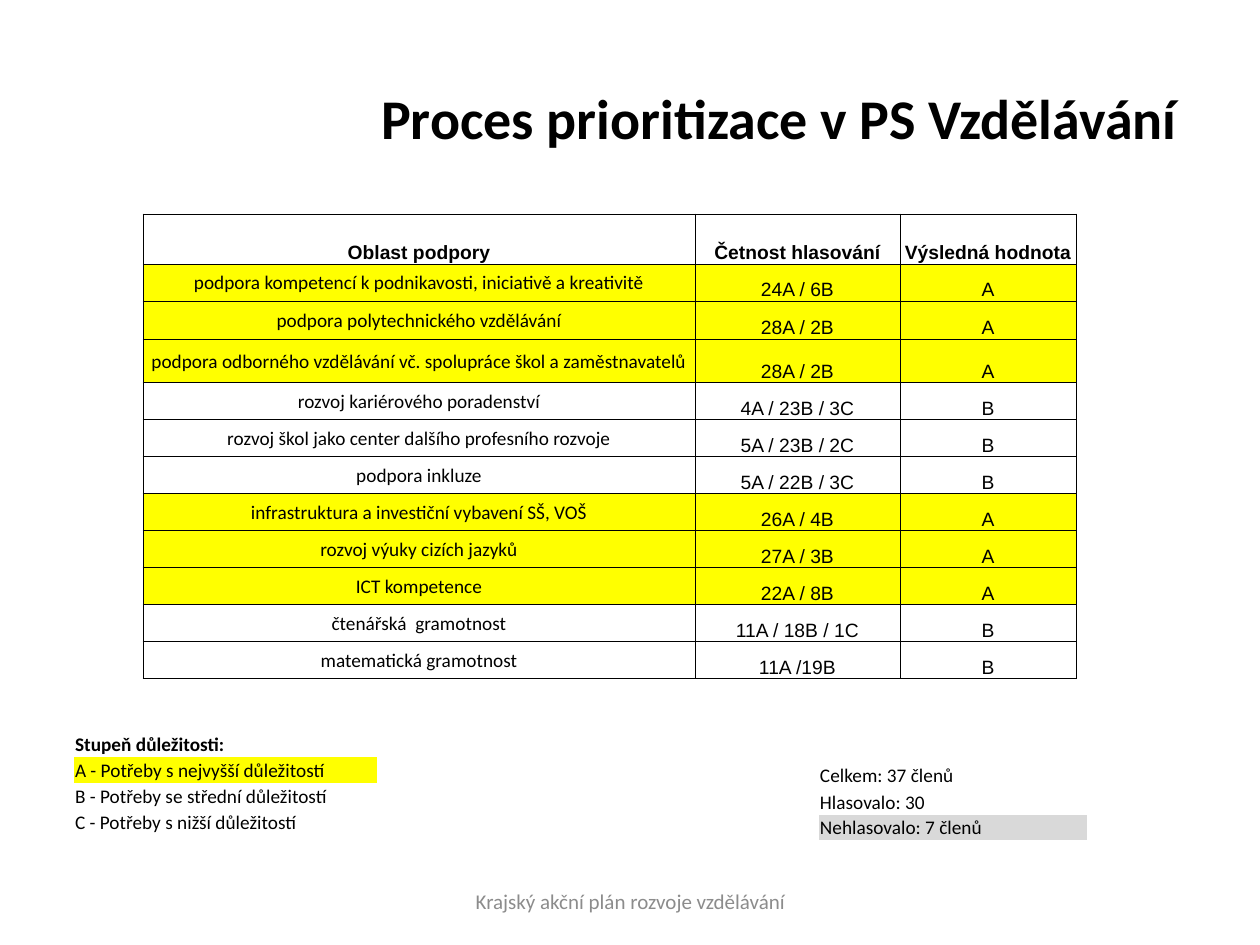
from lxml.etree import SubElement
from pptx import Presentation
from pptx.dml.color import RGBColor
from pptx.enum.text import MSO_ANCHOR, PP_ALIGN
from pptx.oxml.ns import qn
from pptx.util import Pt

EMU_PER_PX = 914400 / 126
COLORS = {"text": "000000", "border": "000000", "top": "FFFF00",
          "absent": "D9D9D9", "footer": "8C8C8C"}
NO_STYLE = "{2D5ABB26-0587-4C30-8999-92F81FD0307C}"


def px(length):
    return round(length * EMU_PER_PX)


class SlideBuilder:
    body_font = "Calibri"
    number_font = "Arial"
    table_size = 11

    def __init__(self, page):
        self.page = page

    def style(self, para, size, color="text", bold=False, font=None, align=PP_ALIGN.LEFT):
        para.alignment = align
        for span in para.runs:
            span.font.size = Pt(size)
            span.font.name = font or self.body_font
            span.font.bold = bold
            span.font.color.rgb = RGBColor.from_string(COLORS[color])

    def centered_text(self, shape, text, size, **look):
        frame = shape.text_frame
        frame.word_wrap = True
        frame.vertical_anchor = MSO_ANCHOR.MIDDLE
        frame.text = text
        self.style(frame.paragraphs[0], size, align=PP_ALIGN.CENTER, **look)

    def title(self, text, left, top, width, height):
        shape = self.page.shapes.title
        shape.left, shape.top = px(left), px(top)
        shape.width, shape.height = px(width), px(height)
        self.centered_text(shape, text, 32, bold=True)

    def label(self, text, left, top, width, height, color):
        box = self.page.shapes.add_textbox(px(left), px(top), px(width), px(height))
        self.centered_text(box, text, 12, color=color)

    def table(self, left, top, columns, heights):
        frame = self.page.shapes.add_table(len(heights), len(columns), px(left), px(top),
                                           px(sum(columns)), px(sum(heights)))
        for style_id in frame.element.iter(qn("a:tableStyleId")):
            style_id.text = NO_STYLE
        table = frame.table
        table.first_row = table.horz_banding = False
        for column, width in zip(table.columns, columns):
            column.width = px(width)
        for row, height in zip(table.rows, heights):
            row.height = px(height)
        return table

    def cell(self, cell, text, fill=None, anchor=MSO_ANCHOR.MIDDLE, border=False, **look):
        cell.margin_left = cell.margin_right = cell.margin_top = px(1)
        cell.margin_bottom = 0
        cell.vertical_anchor = anchor
        cell.text = text
        self.style(cell.text_frame.paragraphs[0], self.table_size, **look)
        if border:
            self.border(cell)
        if fill:
            cell.fill.solid()
            cell.fill.fore_color.rgb = RGBColor.from_string(COLORS[fill])
        else:
            cell.fill.background()

    def border(self, cell):
        properties = cell._tc.get_or_add_tcPr()
        for side in ("a:lnL", "a:lnR", "a:lnT", "a:lnB"):
            line = SubElement(properties, qn(side), w=str(Pt(0.5)))
            paint = SubElement(line, qn("a:solidFill"))
            SubElement(paint, qn("a:srgbClr"), val=COLORS["border"])

    def vote_table(self, left, top, columns, heights, rows):
        table = self.table(left, top, columns, heights)
        for row, values in enumerate(rows):
            for column, text in enumerate(values):
                header = row == 0
                is_area = column == 0 and not header
                self.cell(table.cell(row, column), text, border=True, bold=header,
                          fill="top" if values[-1] == "A" else None,
                          anchor=MSO_ANCHOR.MIDDLE if is_area else MSO_ANCHOR.BOTTOM,
                          font=self.body_font if is_area else self.number_font,
                          align=PP_ALIGN.CENTER)

    def list_table(self, left, top, width, heights, lines, marked, fill, heading=False):
        table = self.table(left, top, [width], heights)
        for row, text in enumerate(lines):
            is_heading = heading and row == 0
            self.cell(table.cell(row, 0), text, bold=is_heading,
                      fill=fill if row == marked else None,
                      anchor=MSO_ANCHOR.BOTTOM if is_heading else MSO_ANCHOR.MIDDLE)


VOTES = [
    ("Oblast podpory", "Četnost hlasování", "Výsledná hodnota"),
    ("podpora kompetencí k podnikavosti, iniciativě a kreativitě", "24A / 6B", "A"),
    ("podpora polytechnického vzdělávání", "28A / 2B", "A"),
    ("podpora odborného vzdělávání vč. spolupráce škol a zaměstnavatelů", "28A / 2B", "A"),
    ("rozvoj kariérového poradenství", "4A / 23B / 3C", "B"),
    ("rozvoj škol jako center dalšího profesního rozvoje", "5A / 23B / 2C", "B"),
    ("podpora inkluze", "5A / 22B / 3C", "B"),
    ("infrastruktura a investiční vybavení SŠ, VOŠ", "26A / 4B", "A"),
    ("rozvoj výuky cizích jazyků", "27A / 3B", "A"),
    ("ICT kompetence", "22A / 8B", "A"),
    ("čtenářská  gramotnost", "11A / 18B / 1C", "B"),
    ("matematická gramotnost", "11A /19B", "B"),
]
LEVELS = ["Stupeň důležitosti:", "A - Potřeby s nejvyšší důležitostí",
          "B - Potřeby se střední důležitostí", "C - Potřeby s nižší důležitostí"]
MEMBERS = ["Celkem: 37 členů", "Hlasovalo: 30", "Nehlasovalo: 7 členů"]


def main():
    deck = Presentation()
    deck.slide_width, deck.slide_height = px(1260), px(945)
    builder = SlideBuilder(deck.slides.add_slide(deck.slide_layouts[5]))

    # Title
    builder.title("Proces prioritizace v PS Vzdělávání", 362, 38, 835, 158)

    # Voting results
    builder.vote_table(143, 214, [552, 205, 176], [50, 37, 38, 44] + [37] * 8, VOTES)

    # Footer
    builder.label("Krajský akční plán rozvoje vzdělávání", 431, 876, 399, 50, "footer")

    # Importance levels and attendance
    builder.list_table(74, 731, 303, [26] * 4, LEVELS, 1, "top", heading=True)
    builder.list_table(819, 760, 268, [30, 25, 25], MEMBERS, 2, "absent")

    deck.save("out.pptx")


if __name__ == "__main__":
    main()
